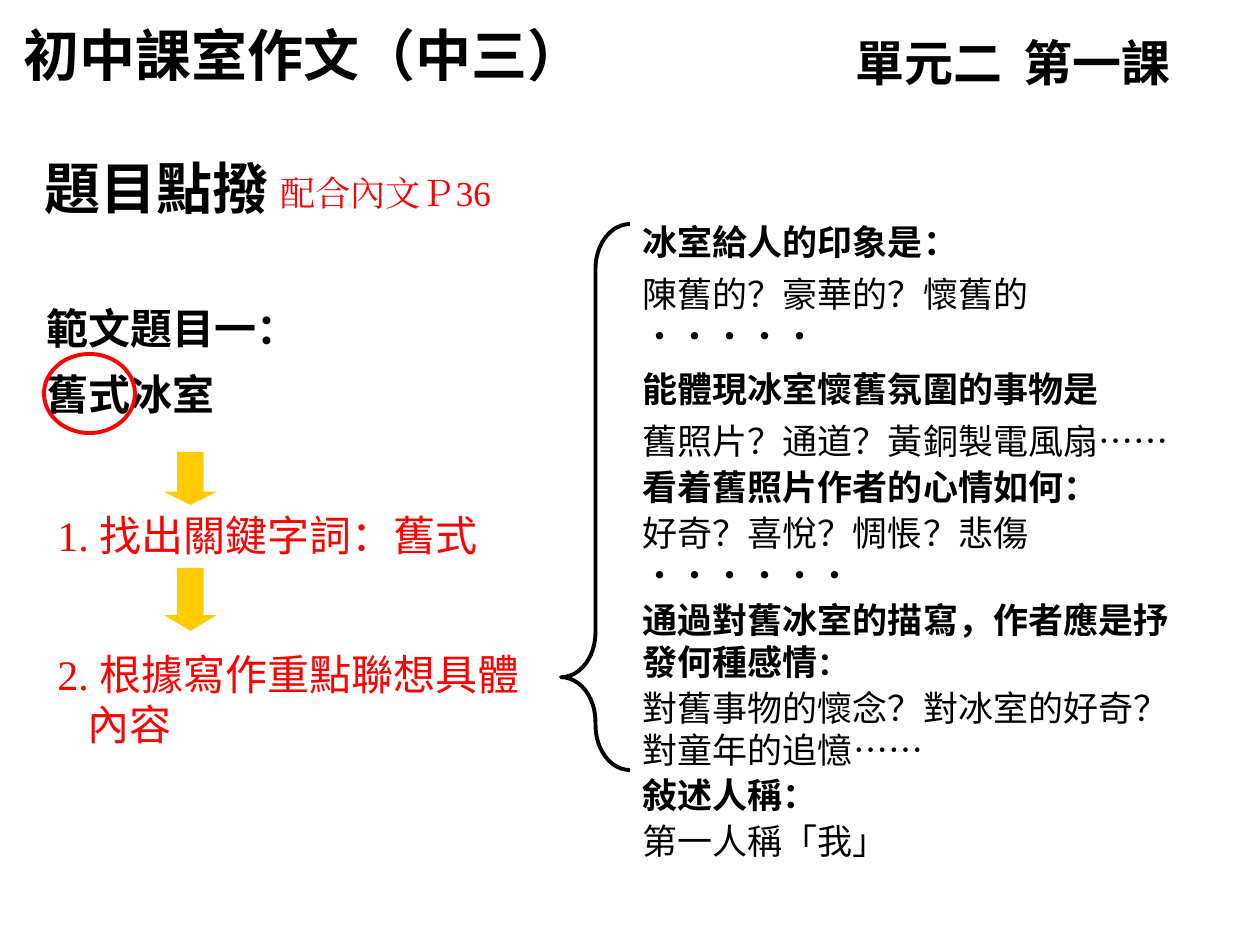
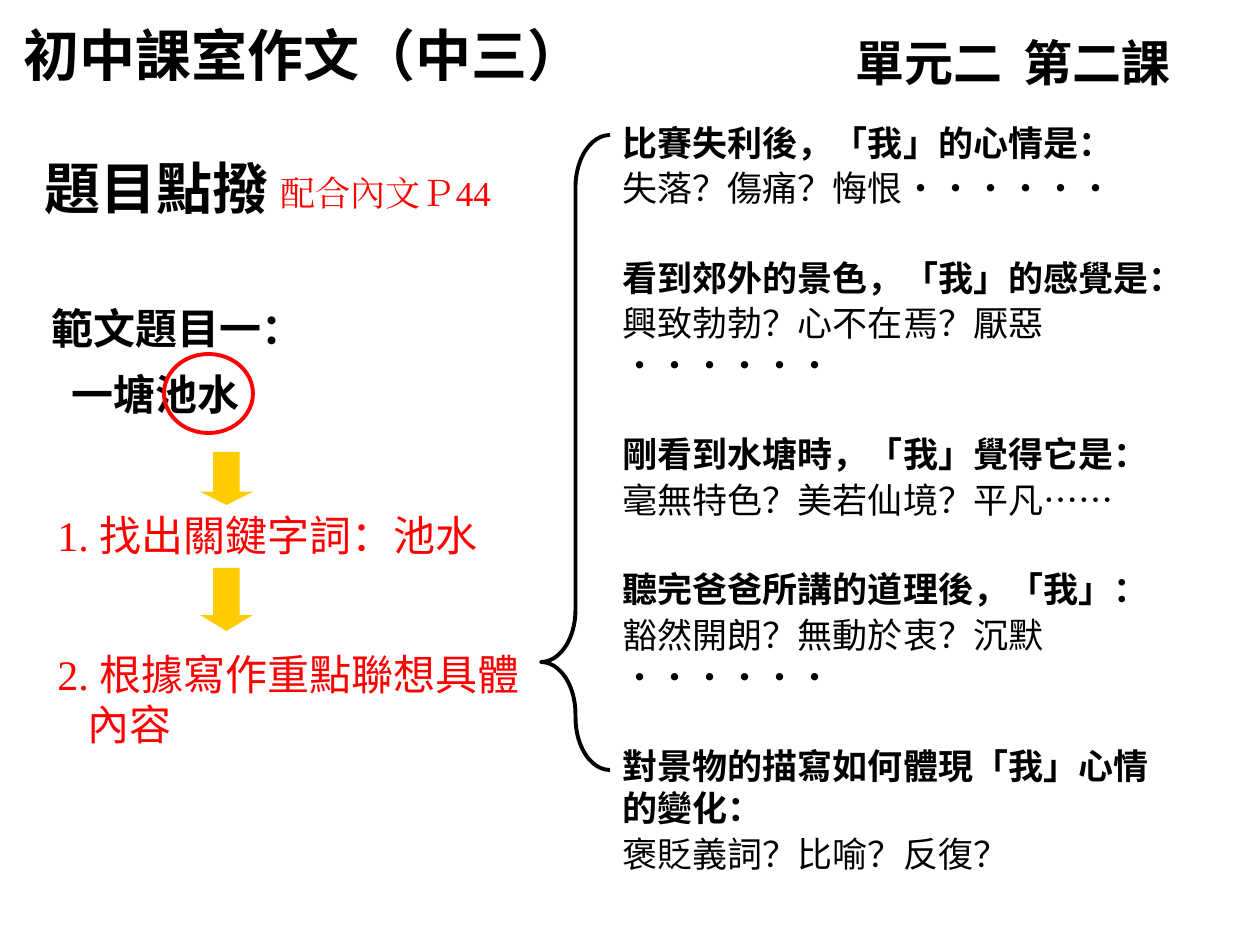
"""Builds two composition-lesson slides with topic hints and guiding questions."""
from lxml import etree
from pptx import Presentation
from pptx.dml.color import RGBColor
from pptx.enum.shapes import MSO_SHAPE
from pptx.enum.text import MSO_ANCHOR, MSO_AUTO_SIZE, PP_ALIGN
from pptx.oxml.ns import qn
from pptx.util import Emu, Pt

PX = 914400 / 126
COLORS = {"ink": "000000", "key": "FF0000", "arrow": "FFCC00"}
SANS, SERIF, HEAD, LABEL, DOTS = (
    "DejaVu Sans", "Times New Roman", "Lato", "Arial", "Noto Sans CJK SC")
ELLIPSE, DOWN, BRACE = MSO_SHAPE.OVAL, MSO_SHAPE.DOWN_ARROW, MSO_SHAPE.LEFT_BRACE
TOP, LEFT, NO_FIT = MSO_ANCHOR.TOP, PP_ALIGN.LEFT, MSO_AUTO_SIZE.NONE
WIDE, NARROW, BREAK = 6, 2, 27

LESSONS = [
    {
        "lesson": "第一課", "page": "36", "topic": "舊式冰室", "keyword": "舊式",
        "topic_x": 34, "topic_indent": 0, "ring": (44, 354, 91, 79), "arrow_x": 164,
        "brace": (561, 224, 69, 546), "brace_adj": (0.65, 0.83),
        "body": (630, 214, 586, 580),
        "questions": [
            ("冰室給人的印象是：", "", 0,
             "陳舊的？豪華的？懷舊的", "·····", WIDE),
            ("能體現冰室懷舊氛圍的事物是", "", WIDE,
             "舊照片？通道？黃銅製電風扇", "……", WIDE),
            ("看着舊照片作者的心情如何：", "", NARROW,
             "好奇？喜悅？惆悵？悲傷", "······", NARROW),
            ("通過對舊冰室的描寫，作者應是抒發何種感情", "：", NARROW,
             "對舊事物的懷念？對冰室的好奇？\n對童年的追憶", "……", NARROW),
            ("敍述人稱：", "", NARROW, "第一人稱「我」", "", NARROW),
        ],
    },
    {
        "lesson": "第二課", "page": "44", "topic": "一塘池水", "keyword": "池水",
        "topic_x": 39, "topic_indent": 20, "ring": (164, 354, 89, 79), "arrow_x": 200,
        "brace": (541, 135, 69, 635), "brace_adj": (0.76, 0.83),
        "body": (610, 115, 576, 699),
        "questions": [
            ("比賽失利後，「我」的心情是：", "", 0,
             "失落？傷痛？悔恨", "······", NARROW),
            ("看到郊外的景色，「我」的感覺是：", "", BREAK,
             "興致勃勃？心不在焉？厭惡", "······", NARROW),
            ("剛看到水塘時，「我」覺得它是：", "", BREAK,
             "毫無特色？美若仙境？平凡", "……", NARROW),
            ("聽完爸爸所講的道理後，「我」：", "", BREAK,
             "豁然開朗？無動於衷？沉默", "······", NARROW),
            ("對景物的描寫如何體現「我」心情的變化：", "", BREAK,
             "褒貶義詞？比喻？反復？", "", NARROW),
        ],
    },
]


def px(n):
    """Turn px into EMU."""
    return Emu(round(n * PX))


def rgb(name):
    """Look up a palette colour."""
    return RGBColor.from_string(COLORS[name])


def add_run(p, text, size, font, color="ink", bold=False):
    """Append one formatted run, with the font set for Latin and East Asian text."""
    r = p.add_run()
    r.text = text
    f = r.font
    f.size, f.name, f.bold = Pt(size), font, bold
    f.color.rgb = rgb(color)
    ea = etree.Element(qn("a:ea"), typeface=font)
    r._r.rPr.find(qn("a:latin")).addnext(ea)
    return r


def add_paragraph(tf, first=False, before=0, indent=0, line=None):
    """Start a left-aligned paragraph without a bullet."""
    p = tf.paragraphs[0] if first else tf.add_paragraph()
    p.alignment, p.space_before = LEFT, Pt(before)
    if line:
        p.line_spacing = Pt(line)
    pPr = p._p.get_or_add_pPr()
    pPr.set("marL", str(px(indent)))
    pPr.set("indent", "0")
    etree.SubElement(pPr, qn("a:buNone"))
    return p


def set_frame(sp, box):
    """Place a text shape and make its frame wrap from the top."""
    sp.left, sp.top, sp.width, sp.height = map(px, box)
    tf = sp.text_frame
    tf.word_wrap, tf.auto_size, tf.vertical_anchor = True, NO_FIT, TOP
    return tf


def add_text(slide, box):
    """Add an empty wrapping text box and return its frame."""
    return set_frame(slide.shapes.add_textbox(*map(px, box)), box)


def add_mark(slide, kind, box, fill=None, line=None, adj=()):
    """Add a preset shape that is either filled or outlined."""
    sp = slide.shapes.add_shape(kind, *map(px, box))
    sp.shadow.inherit = False
    for i, value in enumerate(adj):
        sp.adjustments[i] = value
    if fill:
        sp.fill.solid()
        sp.fill.fore_color.rgb = rgb(fill)
    else:
        sp.fill.background()
    if line:
        sp.line.color.rgb, sp.line.width = rgb(line), Pt(2.25)
    else:
        sp.line.fill.background()


def add_headings(slide, lesson, page):
    """Fill the course title, lesson number, section heading and page reference."""
    p = add_paragraph(set_frame(slide.shapes.title, (11, 14, 658, 79)), first=True)
    add_run(p, "初中課室作文（中三）", 32, HEAD, bold=True)
    p = add_paragraph(add_text(slide, (843, 26, 422, 72)), first=True)
    add_run(p, "單元二", 28, HEAD, bold=True)
    gap = add_run(p, " ", 28, HEAD, bold=True)
    gap._r.rPr.set("spc", "540")
    add_run(p, lesson, 28, HEAD, bold=True)
    p = add_paragraph(add_text(slide, (32, 147, 388, 79)), first=True)
    add_run(p, "題目點撥", 32, LABEL, bold=True)
    p = add_paragraph(add_text(slide, (268, 165, 311, 54)), first=True)
    add_run(p, f"配合內文Ｐ{page}", 20, SERIF, "key")


def add_topic(slide, topic, left, indent):
    """Add the model essay topic."""
    tf = add_text(slide, (left, 280, 630, 144))
    p = add_paragraph(tf, first=True, line=38)
    add_run(p, "範文題目一：", 24, SANS, bold=True)
    p = add_paragraph(tf, indent=indent, line=38)
    add_run(p, topic, 24, SANS, bold=True)


def add_step(slide, number, top, lines):
    """Add a numbered step whose later lines are indented."""
    tf = add_text(slide, (45, top, 526, 63 * len(lines)))
    for i, text in enumerate(lines):
        p = add_paragraph(tf, first=i == 0, indent=30 if i else 0)
        if i == 0:
            add_run(p, f"{number}. ", 24, SERIF, "key")
        add_run(p, text, 24, SANS, "key")


def add_questions(slide, box, questions):
    """Fill the body with bold questions and their possible answers."""
    tf = set_frame(slide.placeholders[1], box)
    for i, (ask, colon, ask_gap, answer, dots, answer_gap) in enumerate(questions):
        p = add_paragraph(tf, first=i == 0, before=ask_gap, line=24)
        add_run(p, ask, 20, SANS, bold=True)
        if colon:
            add_run(p, colon, 18, LABEL, bold=True)
        p = add_paragraph(tf, before=answer_gap, line=24)
        for j, text in enumerate(answer.split("\n")):
            if j:
                p.add_line_break()
            add_run(p, text, 20, SANS)
        if dots:
            add_run(p, dots, 20, DOTS)


def build_lesson(prs, d):
    """Build one lesson slide."""
    slide = prs.slides.add_slide(prs.slide_layouts[1])
    add_headings(slide, d["lesson"], d["page"])
    add_topic(slide, d["topic"], d["topic_x"], d["topic_indent"])
    add_mark(slide, ELLIPSE, d["ring"], line="key")
    add_mark(slide, DOWN, (d["arrow_x"], 452, 53, 53), fill="arrow", adj=(0.5, 0.25))
    add_step(slide, 1, 503, ["找出關鍵字詞：" + d["keyword"]])
    add_mark(slide, DOWN, (d["arrow_x"], 568, 53, 63), fill="arrow", adj=(0.5, 0.3))
    add_step(slide, 2, 642, ["根據寫作重點聯想具體", "內容"])
    add_mark(slide, BRACE, d["brace"], line="ink", adj=d["brace_adj"])
    add_questions(slide, d["body"], d["questions"])


def main():
    """Create the presentation."""
    prs = Presentation()
    prs.slide_width, prs.slide_height = px(1260), px(945)
    for lesson in LESSONS:
        build_lesson(prs, lesson)
    prs.save("out.pptx")


if __name__ == "__main__":
    main()
